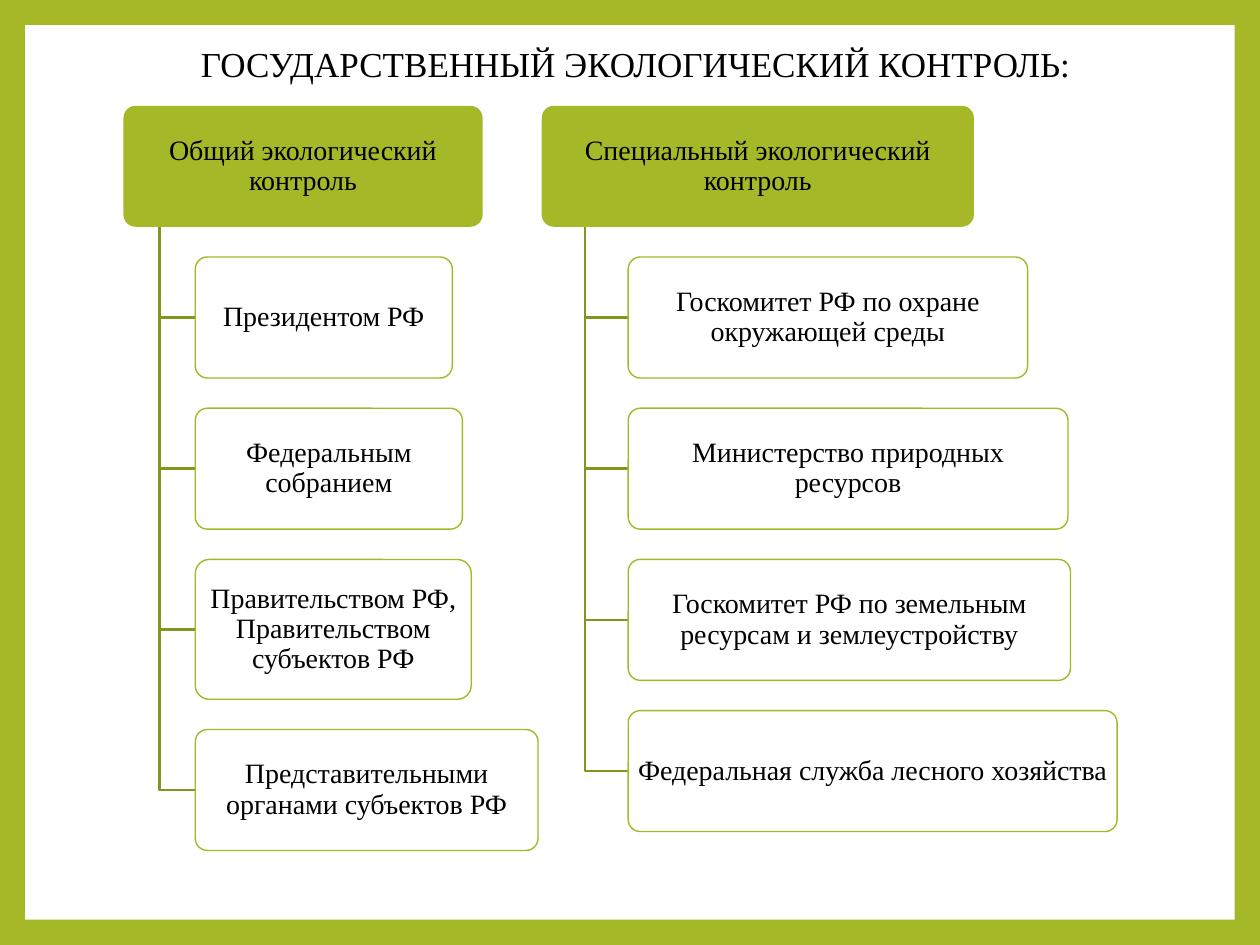
from lxml.etree import SubElement
from pptx import Presentation
from pptx.dml.color import RGBColor
from pptx.enum.shapes import MSO_SHAPE
from pptx.enum.text import MSO_ANCHOR, PP_ALIGN
from pptx.oxml.ns import qn
from pptx.util import Inches, Pt

GREEN, DARK_GREEN, WHITE, BLACK = "A6B727", "85931F", "FFFFFF", "000000"
BOX_HEIGHT = Inches(0.96)
TALL_BOX_HEIGHT = Inches(1.11)
GAP = Inches(0.24)

GENERAL_CONTROL = [
    ("Президентом РФ", Inches(2.04), BOX_HEIGHT),
    ("Федеральным собранием", Inches(2.12), BOX_HEIGHT),
    ("Правительством РФ, Правительством субъектов РФ", Inches(2.19), TALL_BOX_HEIGHT),
    ("Представительными органами субъектов РФ", Inches(2.72), BOX_HEIGHT),
]
SPECIAL_CONTROL = [
    ("Госкомитет РФ по охране окружающей среды", Inches(3.17), BOX_HEIGHT),
    ("Министерство природных ресурсов", Inches(3.49), BOX_HEIGHT),
    ("Госкомитет РФ по земельным ресурсам и землеустройству", Inches(3.51), BOX_HEIGHT),
    ("Федеральная служба лесного хозяйства", Inches(3.88), BOX_HEIGHT),
]


def paint(color_format, color):
    color_format.fore_color.rgb = RGBColor.from_string(color)


def write_text(shape, text, size=16, font="Times New Roman", color=BLACK,
               margin_x=Inches(0.03), margin_y=Inches(0.02)):
    frame = shape.text_frame
    frame.word_wrap = True
    frame.vertical_anchor = MSO_ANCHOR.MIDDLE
    frame.margin_left = frame.margin_right = margin_x
    frame.margin_top = frame.margin_bottom = margin_y
    paragraph = frame.paragraphs[0]
    paragraph.alignment = PP_ALIGN.CENTER
    paragraph.line_spacing = 0.9
    run = paragraph.add_run()
    run.text = text
    run.font.size = Pt(size)
    run.font.name = font
    run.font.color.rgb = RGBColor.from_string(color)


def add_box(slide, text, left, top, width, height, fill, line=None, opacity=100):
    box = slide.shapes.add_shape(MSO_SHAPE.ROUNDED_RECTANGLE, left, top, width, height)
    box.shadow.inherit = False
    box.adjustments[0] = 0.1
    box.fill.solid()
    paint(box.fill, fill)
    if opacity < 100:
        color = box.fill._xPr.find(f"{qn('a:solidFill')}/{qn('a:srgbClr')}")
        SubElement(color, qn("a:alpha"), val=str(opacity * 1000))
    if line:
        box.line.fill.solid()
        paint(box.line.fill, line)
        box.line.width = Pt(0.79)
    else:
        box.line.fill.background()
    write_text(box, text)


def add_elbow(slide, left, top, right, bottom):
    """Draw a line down from the header, then right to a box."""
    builder = slide.shapes.build_freeform(left, top)
    builder.add_line_segments([(left, bottom), (right, bottom)], close=False)
    elbow = builder.convert_to_shape()
    elbow.shadow.inherit = False
    elbow.fill.background()
    elbow.line.fill.solid()
    paint(elbow.line.fill, DARK_GREEN)
    elbow.line.width = Pt(1.5)


def add_branch(slide, header, items, left, top, width):
    """Draw a header with its items hanging from a trunk a tenth of its width in."""
    add_box(slide, header, left, top, width, BOX_HEIGHT, GREEN)
    header_bottom = top + BOX_HEIGHT
    trunk_left = left + width // 10
    item_left = left + width // 5
    item_top = header_bottom + GAP
    for text, item_width, item_height in items:
        add_elbow(slide, trunk_left, header_bottom, item_left, item_top + item_height // 2)
        add_box(slide, text, item_left, item_top, item_width, item_height,
                WHITE, line=GREEN, opacity=90)
        item_top += item_height + GAP


def add_frame(slide, width, height, border):
    """Leave a green border around a white panel."""
    slide.background.fill.solid()
    paint(slide.background.fill, GREEN)
    panel = slide.shapes.add_shape(MSO_SHAPE.RECTANGLE, border, border,
                                   width - 2 * border, height - 2 * border)
    panel.shadow.inherit = False
    panel.fill.solid()
    paint(panel.fill, WHITE)
    panel.line.fill.background()


def add_title(slide, text, left, top, width, height):
    title = slide.shapes.add_textbox(left, top, width, height)
    write_text(title, text, size=20, margin_x=Inches(0.1), margin_y=Inches(0.05))


def main():
    presentation = Presentation()
    presentation.slide_width = Inches(10)
    presentation.slide_height = Inches(7.5)
    slide = presentation.slides.add_slide(presentation.slide_layouts[6])
    add_frame(slide, presentation.slide_width, presentation.slide_height, Inches(0.2))
    add_title(slide, "ГОСУДАРСТВЕННЫЙ ЭКОЛОГИЧЕСКИЙ КОНТРОЛЬ:",
              Inches(0.2), Inches(0.21), Inches(9.69), Inches(0.63))
    add_branch(slide, "Общий экологический контроль", GENERAL_CONTROL,
               Inches(0.98), Inches(0.84), Inches(2.85))
    add_branch(slide, "Специальный экологический контроль", SPECIAL_CONTROL,
               Inches(4.3), Inches(0.84), Inches(3.43))
    presentation.save("out.pptx")


if __name__ == "__main__":
    main()
